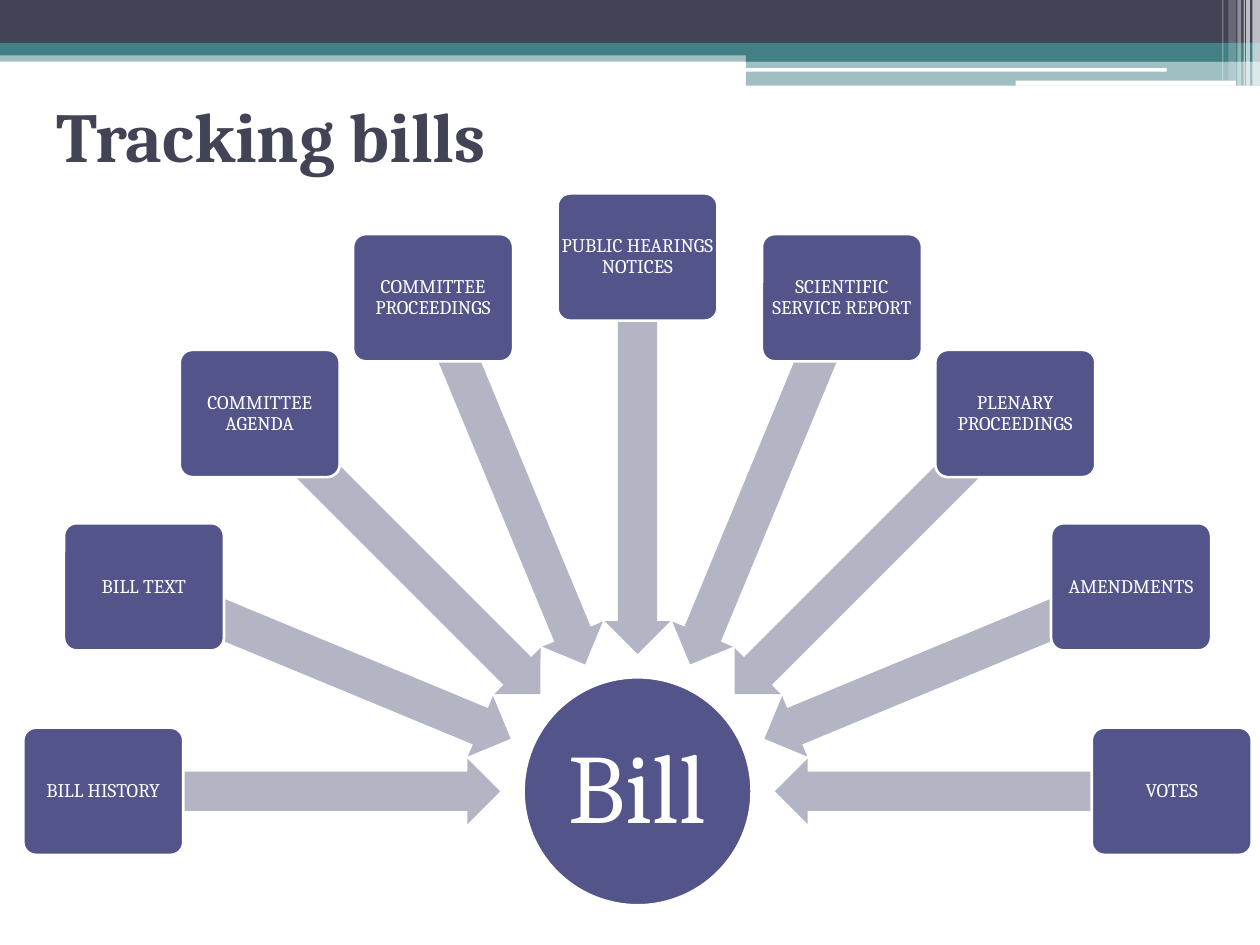
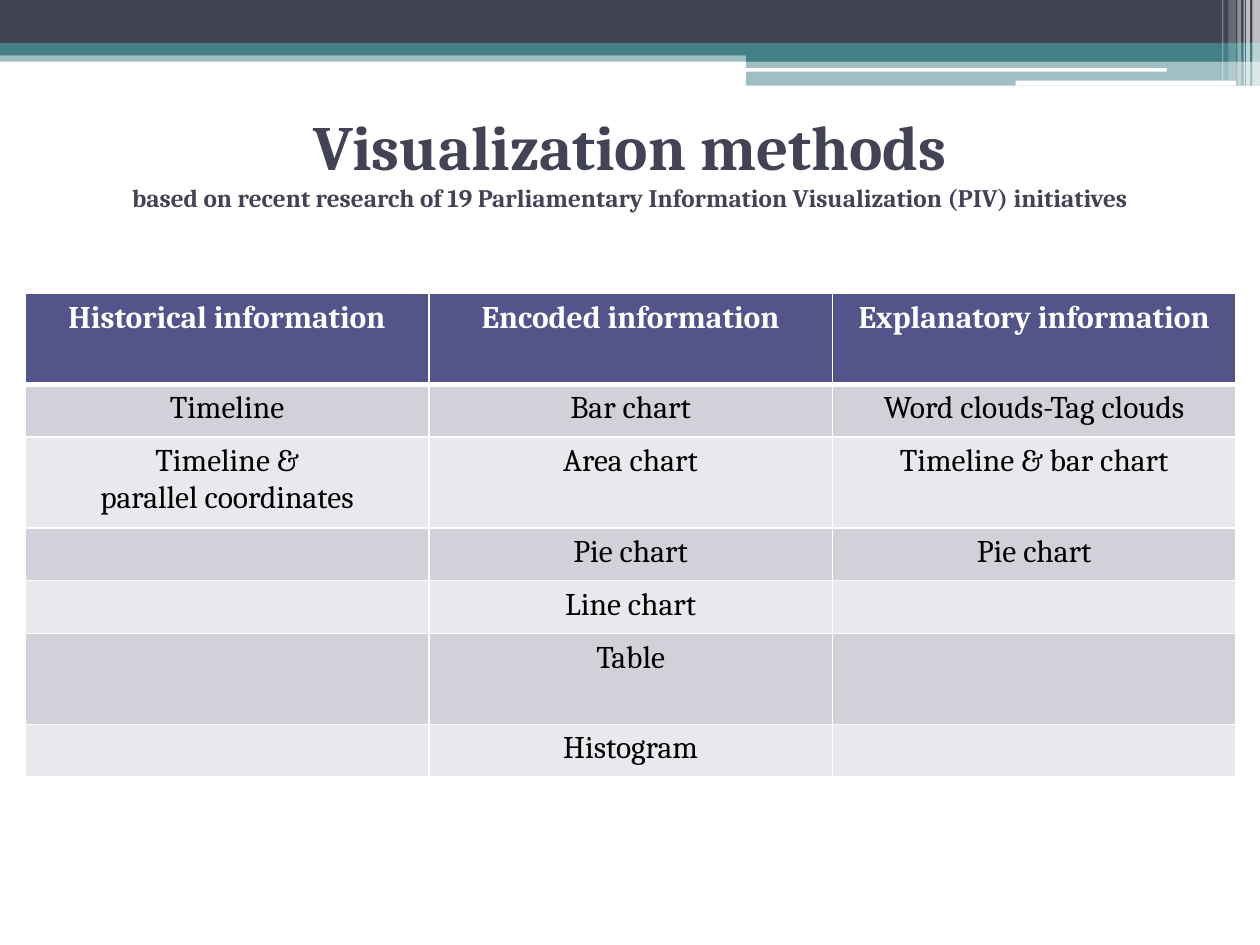
import math
import pptx
import pptx.util
import pptx.dml.color
import pptx.enum.shapes
import pptx.enum.text
import pptx.oxml
import pptx.oxml.ns

Inches = pptx.util.Inches
Pt = pptx.util.Pt
SHAPES = pptx.enum.shapes.MSO_SHAPE
MIDDLE = pptx.enum.text.MSO_ANCHOR.MIDDLE
LEFT = pptx.enum.text.PP_ALIGN.LEFT
CENTER = pptx.enum.text.PP_ALIGN.CENTER

FONT = "Cambria"
INK, TEAL, INDIGO, LILAC = "424456", "438086", "53548A", "B3B4C4"
WHITE, BLACK = "FFFFFF", "000000"
STRIPES = ("D1D1DA", "E9E9ED")

BANDS = [
    (0, 0.4, 10, 0.09, TEAL, 50),
    (0, 0, 10, 0.34, INK, 100),
    (0, 0.34, 10, 0.1, TEAL, 100),
    (5.92, 0.39, 4.08, 0.1, TEAL, 100),
    (5.92, 0.48, 4.08, 0.2, TEAL, 50),
    (5.91, 0.54, 3.35, 0.03, WHITE, 100),
    (8.06, 0.64, 1.75, 0.04, WHITE, 100),
    (9.94, 0, 0.06, 0.68, WHITE, 65),
    (9.89, 0, 0.03, 0.68, WHITE, 65),
    (9.87, 0, 0.01, 0.68, WHITE, 60),
    (9.82, 0, 0.03, 0.68, WHITE, 40),
    (9.75, 0, 0.06, 0.64, WHITE, 20),
    (9.7, 0, 0.01, 0.64, WHITE, 30),
]

TRACKING_TITLE = [("Tracking bills", 40)]
HUB = "Bill"
SOURCES = [
    "BILL HISTORY", "BILL TEXT", "COMMITTEE AGENDA", "COMMITTEE PROCEEDINGS",
    "PUBLIC HEARINGS NOTICES", "SCIENTIFIC SERVICE REPORT",
    "PLENARY PROCEEDINGS", "AMENDMENTS", "VOTES",
]
HUB_X, HUB_Y, HUB_SIZE = 5.06, 6.28, 1.81
BOX_RADIUS, ARROW_RADIUS = 4.24, 2.66
BOX_WIDTH, BOX_HEIGHT = 1.27, 1.01
ARROW_WIDTH, ARROW_HEIGHT = 3.14, 0.52

METHODS_TITLE = [
    ("Visualization methods", 36),
    ("based on recent research of 19 Parliamentary Information "
     "Visualization (PIV) initiatives", 14.4),
]
METHODS = [
    ("Historical information", "Encoded information", "Explanatory information"),
    ("Timeline", "Bar chart", "Word clouds-Tag clouds"),
    ("Timeline &\nparallel coordinates", "Area chart", "Timeline & bar chart"),
    ("", "Pie chart", "Pie chart"),
    ("", "Line chart", ""),
    ("", "Table", ""),
    ("", "Histogram", ""),
]
SHORT_ROW, TALL_ROW = 0.42, 0.72
TALL_ROWS = (0, 2, 5)


def rgb(color):
    return pptx.dml.color.RGBColor.from_string(color)


def style_run(run, size, color, bold=False):
    run.font.name = FONT
    run.font.size = Pt(size)
    run.font.bold = bold
    run.font.color.rgb = rgb(color)


def add_filled(slide, kind, left, top, width, height, color, outline=None):
    shape = slide.shapes.add_shape(
        kind, Inches(left), Inches(top), Inches(width), Inches(height))
    shape.shadow.inherit = False
    shape.fill.solid()
    shape.fill.fore_color.rgb = rgb(color)
    if outline:
        shape.line.color.rgb = rgb(outline)
        shape.line.width = Pt(1.5)
    else:
        shape.line.fill.background()
    return shape


def add_centred(slide, kind, x, y, width, height, color, outline=None):
    return add_filled(slide, kind, x - width / 2, y - height / 2,
                      width, height, color, outline)


def label(shape, text, size):
    frame = shape.text_frame
    frame.margin_left = frame.margin_right = 0
    frame.margin_top = frame.margin_bottom = 0
    frame.word_wrap = True
    frame.vertical_anchor = MIDDLE
    frame.text = text
    paragraph = frame.paragraphs[0]
    paragraph.alignment = CENTER
    paragraph.line_spacing = 0.9
    style_run(paragraph.runs[0], size, WHITE)


def move_bands_to_layout(slide, layout):
    for position, (left, top, width, height, color, opacity) in enumerate(BANDS):
        band = add_filled(slide, SHAPES.RECTANGLE, left, top, width, height, color)
        if opacity < 100:
            tint = next(band.element.iter(pptx.oxml.ns.qn("a:srgbClr")))
            alpha = pptx.oxml.parse_xml(
                f'<a:alpha {pptx.oxml.ns.nsdecls("a")} val="{opacity * 1000}"/>')
            tint.append(alpha)
        layout.shapes.element.insert(2 + position, band.element)


def set_title(slide, lines, left, top, width, height, alignment):
    title = slide.shapes.title
    title.left, title.top = Inches(left), Inches(top)
    title.width, title.height = Inches(width), Inches(height)
    frame = title.text_frame
    frame.auto_size = pptx.enum.text.MSO_AUTO_SIZE.NONE
    frame.vertical_anchor = MIDDLE
    paragraph = frame.paragraphs[0]
    paragraph.text = "\v".join(text for text, size in lines)
    paragraph.alignment = alignment
    for run, (text, size) in zip(paragraph.runs, lines):
        style_run(run, size, INK, bold=True)


def set_borders(cell, row):
    widths = {"lnL": 1, "lnR": 1, "lnT": 3 if row == 1 else 1,
              "lnB": 3 if row == 0 else 1}
    properties = cell._tc.get_or_add_tcPr()
    for position, (side, width) in enumerate(widths.items()):
        properties.insert(position, pptx.oxml.parse_xml(
            f'<a:{side} {pptx.oxml.ns.nsdecls("a")} w="{Pt(width)}">'
            f'<a:solidFill><a:srgbClr val="{WHITE}"/></a:solidFill></a:{side}>'))


def build_tracking(slide):
    set_title(slide, TRACKING_TITLE, 0.35, 0.6, 9.15, 0.94, LEFT)
    hub = add_centred(slide, SHAPES.OVAL, HUB_X, HUB_Y, HUB_SIZE, HUB_SIZE,
                      INDIGO, WHITE)
    label(hub, HUB, 56)
    step = 180 / (len(SOURCES) - 1)
    for index, source in enumerate(SOURCES):
        angle = 180 + index * step
        across, down = math.cos(math.radians(angle)), math.sin(math.radians(angle))
        arrow = add_centred(
            slide, SHAPES.LEFT_ARROW,
            HUB_X + ARROW_RADIUS * across, HUB_Y + ARROW_RADIUS * down,
            ARROW_WIDTH, ARROW_HEIGHT, LILAC)
        arrow.rotation = angle % 360
        arrow.adjustments[0], arrow.adjustments[1] = 0.6, 0.5
        box = add_centred(
            slide, SHAPES.ROUNDED_RECTANGLE,
            HUB_X + BOX_RADIUS * across, HUB_Y + BOX_RADIUS * down,
            BOX_WIDTH, BOX_HEIGHT, INDIGO, WHITE)
        box.adjustments[0] = 0.1
        label(box, source, 11)


def build_methods(slide):
    set_title(slide, METHODS_TITLE, 0, 0.68, 10, 1.18, CENTER)
    heights = [TALL_ROW if row in TALL_ROWS else SHORT_ROW
               for row in range(len(METHODS))]
    table = slide.shapes.add_table(
        len(METHODS), len(METHODS[0]), Inches(0.2), Inches(2.33),
        Inches(9.61), Inches(sum(heights))).table
    for row, methods in enumerate(METHODS):
        table.rows[row].height = Inches(heights[row])
        header = row == 0
        for column, method in enumerate(methods):
            cell = table.cell(row, column)
            cell.fill.solid()
            cell.fill.fore_color.rgb = rgb(INDIGO if header else STRIPES[(row - 1) % 2])
            set_borders(cell, row)
            cell.text_frame.text = method
            for paragraph in cell.text_frame.paragraphs:
                paragraph.alignment = CENTER
                for run in paragraph.runs:
                    style_run(run, 18, WHITE if header else BLACK, bold=header)


def main():
    deck = pptx.Presentation()
    deck.slide_width, deck.slide_height = Inches(10), Inches(7.5)
    layout = deck.slide_layouts.get_by_name("Title Only")
    tracking = deck.slides.add_slide(layout)
    methods = deck.slides.add_slide(layout)
    move_bands_to_layout(tracking, layout)
    build_tracking(tracking)
    build_methods(methods)
    deck.save("out.pptx")


if __name__ == "__main__":
    main()
